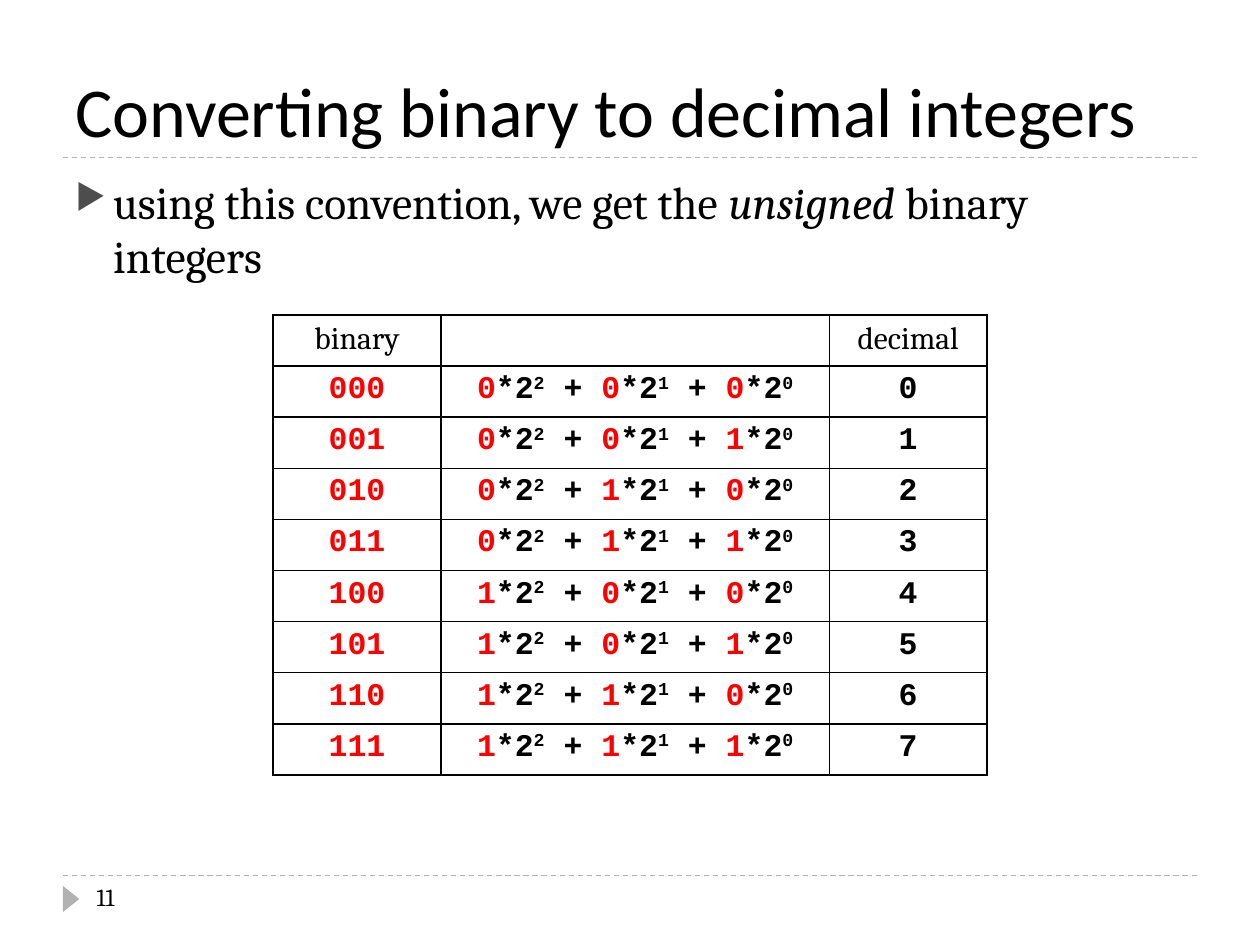
import pptx
import pptx.dml.color
import pptx.enum.dml
import pptx.enum.shapes
import pptx.enum.text
import pptx.oxml
import pptx.oxml.ns
import pptx.util

Pt = pptx.util.Pt
PP_ALIGN = pptx.enum.text.PP_ALIGN
ANCHOR = pptx.enum.text.MSO_ANCHOR

BLACK, RED, WHITE = "000000", "FF0000", "FFFFFF"
RULE_GREY, BULLET_GREY = "B2B2B2", "4D4D4D"
HEADING_FONT, BODY_FONT, CODE_FONT = "Calibri", "Cambria", "Courier New"

TITLE = "Converting binary to decimal integers"
# (text, italic)
STATEMENT = [
    ("using this convention, we get the ", False),
    ("unsigned", True),
    (" binary integers", False),
]
HEADINGS = ["binary", "", "decimal"]
BIT_COUNT = 3
PAGE_NUMBER = "11"

COLUMN_WIDTHS = [96, 222, 90]
ROW_HEIGHT = 29.2
TABLE_LEFT, TABLE_TOP = 156, 180
RULE_LEFT, RULE_RIGHT = 36, 684
RULE_TOPS = [90, 500.4]


def rgb(hex_color):
    return pptx.dml.color.RGBColor.from_string(hex_color)


def add_run(paragraph, text, font, size, color=BLACK, bold=False, italic=False, raised=False):
    run = paragraph.add_run()
    run.text = text
    run.font.name = font
    run.font.size = Pt(size)
    run.font.bold = bold
    run.font.italic = italic
    run.font.color.rgb = rgb(color)
    if raised:
        run._r.get_or_add_rPr().set("baseline", "30000")


def drawing_element(xml):
    """Parse an element whose root tag uses the a: prefix."""
    tag, rest = xml[1:].split(" ", 1)
    return pptx.oxml.parse_xml(f"<{tag} {pptx.oxml.ns.nsdecls('a')} {rest}")


def add_text_box(slide, left, top, width, height):
    frame = slide.shapes.add_textbox(Pt(left), Pt(top), Pt(width), Pt(height)).text_frame
    frame.word_wrap = True
    return frame.paragraphs[0]


def add_title(slide):
    title = slide.shapes.title
    title.left, title.top, title.width, title.height = Pt(36), Pt(12.2), Pt(648), Pt(77.8)
    frame = title.text_frame
    frame.auto_size = pptx.enum.text.MSO_AUTO_SIZE.NONE
    frame.vertical_anchor = ANCHOR.BOTTOM
    frame.paragraphs[0].alignment = PP_ALIGN.LEFT
    add_run(frame.paragraphs[0], TITLE, HEADING_FONT, 40)


def add_rule(slide, top):
    rule = slide.shapes.add_connector(
        pptx.enum.shapes.MSO_CONNECTOR.STRAIGHT, Pt(RULE_LEFT), Pt(top), Pt(RULE_RIGHT), Pt(top))
    rule.line.color.rgb = rgb(RULE_GREY)
    rule.line.width = Pt(0.75)
    rule.line.dash_style = pptx.enum.dml.MSO_LINE.DASH
    rule._element.spPr.append(drawing_element("<a:effectLst />"))


def add_page_marker(slide):
    marker = slide.shapes.add_shape(
        pptx.enum.shapes.MSO_SHAPE.ISOSCELES_TRIANGLE, Pt(33.1), Pt(509), Pt(15), Pt(9.4))
    marker.rotation = 90
    marker.shadow.inherit = False
    marker.fill.solid()
    marker.fill.fore_color.rgb = rgb(RULE_GREY)
    marker.line.fill.background()


def add_statement(slide):
    paragraph = add_text_box(slide, 36, 95.8, 648, 388.8)
    paragraph.space_before = Pt(6)
    properties = paragraph._p.get_or_add_pPr()
    indent = Pt(21.6)
    properties.set("marL", str(indent))
    properties.set("indent", str(-indent))
    for bullet_part in (
        f'<a:buClr ><a:srgbClr val="{BULLET_GREY}"/></a:buClr>',
        '<a:buSzPct val="76000"/>',
        '<a:buChar char="▶"/>',
    ):
        properties.append(drawing_element(bullet_part))
    for text, italic in STATEMENT:
        add_run(paragraph, text, BODY_FONT, 26, italic=italic)


def style_cell(cell):
    """Give the cell a thin black border, a white fill and centred text."""
    properties = cell._tc.get_or_add_tcPr()
    for side in ("lnL", "lnR", "lnT", "lnB"):
        properties.append(drawing_element(
            f'<a:{side} w="{Pt(1)}"><a:solidFill><a:srgbClr val="{BLACK}"/></a:solidFill></a:{side}>'))
    cell.fill.solid()
    cell.fill.fore_color.rgb = rgb(WHITE)
    cell.text_frame.paragraphs[0].alignment = PP_ALIGN.CENTER


def add_expansion(paragraph, bits):
    """Write the bits as a sum of powers of two."""
    for position, bit in enumerate(bits):
        if position:
            add_run(paragraph, " + ", CODE_FONT, 18, bold=True)
        add_run(paragraph, bit, CODE_FONT, 18, RED, bold=True)
        add_run(paragraph, "*2", CODE_FONT, 18, bold=True)
        power = str(len(bits) - 1 - position)
        add_run(paragraph, power, CODE_FONT, 18, bold=True, raised=True)


def add_conversion_table(slide):
    row_count = 1 + 2 ** BIT_COUNT
    table = slide.shapes.add_table(
        row_count, len(HEADINGS), Pt(TABLE_LEFT), Pt(TABLE_TOP),
        Pt(sum(COLUMN_WIDTHS)), Pt(ROW_HEIGHT * row_count)).table
    table.first_row = table.horz_banding = False
    for column, width in zip(table.columns, COLUMN_WIDTHS):
        column.width = Pt(width)
    for row in table.rows:
        row.height = Pt(ROW_HEIGHT)
    for cell in table.iter_cells():
        style_cell(cell)

    for column, heading in enumerate(HEADINGS):
        if heading:
            add_run(table.cell(0, column).text_frame.paragraphs[0], heading, BODY_FONT, 18)
    for number in range(2 ** BIT_COUNT):
        bits = f"{number:0{BIT_COUNT}b}"
        binary, expansion, decimal = (
            table.cell(number + 1, column).text_frame.paragraphs[0]
            for column in range(len(HEADINGS)))
        add_run(binary, bits, CODE_FONT, 18, RED, bold=True)
        add_expansion(expansion, bits)
        add_run(decimal, str(number), CODE_FONT, 18, bold=True)


def main():
    deck = pptx.Presentation()
    deck.slide_width, deck.slide_height = Pt(720), Pt(540)
    slide = deck.slides.add_slide(deck.slide_layouts.get_by_name("Title Only"))
    for top in RULE_TOPS:
        add_rule(slide, top)
    add_page_marker(slide)
    add_title(slide)
    add_statement(slide)
    add_run(add_text_box(slide, 48.2, 500.4, 156.2, 28.8), PAGE_NUMBER, BODY_FONT, 14)
    add_conversion_table(slide)
    deck.save("out.pptx")


if __name__ == "__main__":
    main()
